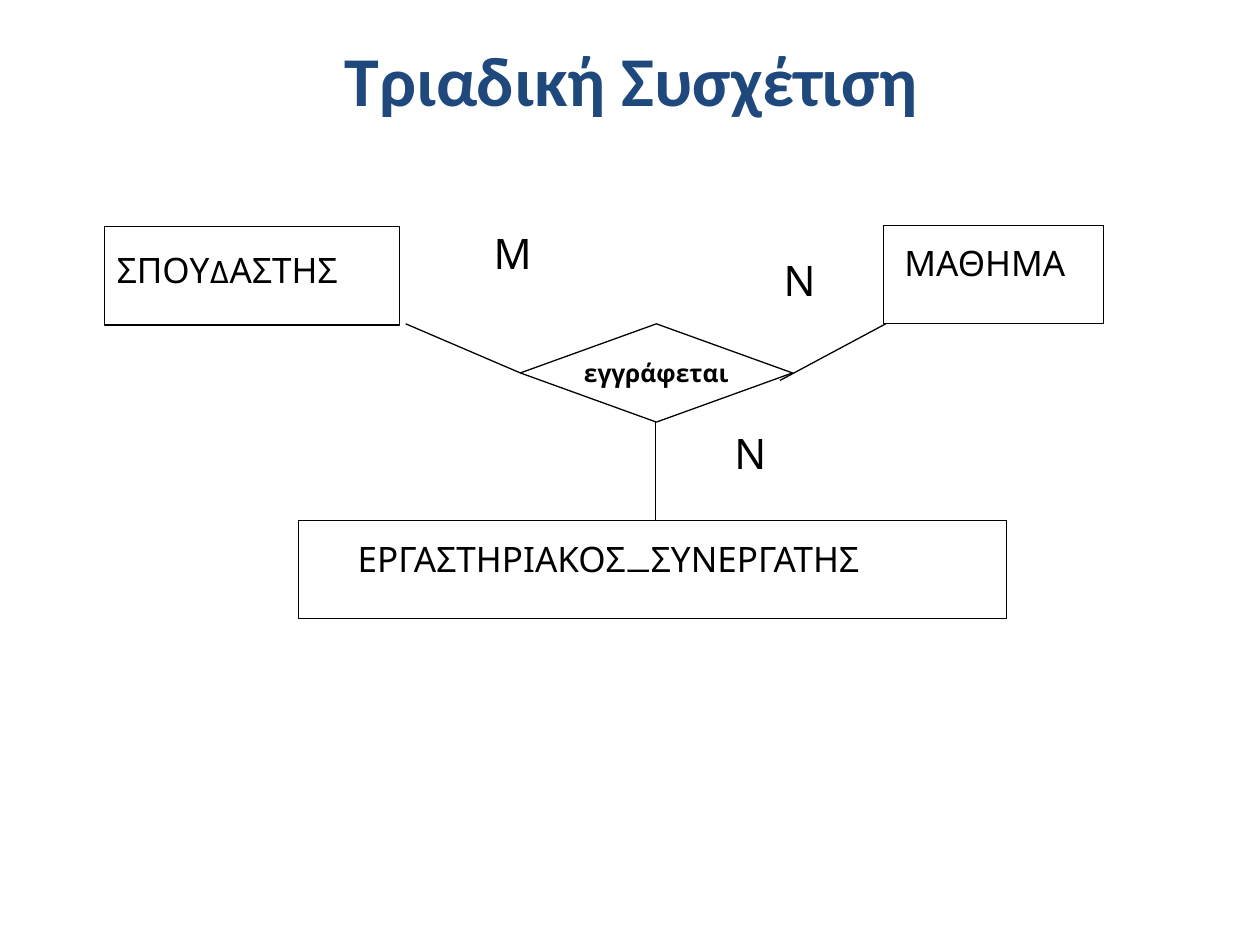
from lxml.etree import SubElement
from pptx import Presentation
from pptx.dml.color import RGBColor
from pptx.enum.shapes import MSO_CONNECTOR, MSO_SHAPE
from pptx.enum.text import MSO_ANCHOR, PP_ALIGN
from pptx.oxml.ns import qn
from pptx.util import Inches, Pt

# Content: positions in inches
TITLE = "Τριαδική Συσχέτιση"
ENTITIES = [  # left, top, width, height
    (0.83, 1.8, 2.34, 0.78),
    (7.01, 1.79, 1.75, 0.78),
    (2.37, 4.13, 5.62, 0.78),
]
RELATIONSHIP = ("εγγράφεται", (4.13, 2.57, 2.16, 0.78))
LINKS = [  # start, end
    ((3.22, 2.57), (4.13, 2.96)),
    ((6.19, 3.02), (7.03, 2.57)),
    ((5.2, 3.35), (5.2, 4.13)),
]
LABELS = [  # text, size, position
    ("ΣΠΟΥΔΑΣΤΗΣ", 20, (0.83, 1.92, 2.34, 0.58)),
    ("ΜΑΘΗΜΑ", 20, (7.08, 1.87, 1.66, 0.58)),
    ("ΕΡΓΑΣΤΗΡΙΑΚΟΣ_ΣΥΝΕΡΓΑΤΗΣ", 20, (2.74, 4.22, 4.98, 0.58)),
    ("Ν", 24, (6.12, 1.97, 0.52, 0.67)),
    ("Ν", 24, (5.73, 3.34, 0.52, 0.67)),
    ("Μ", 24, (3.82, 1.76, 0.57, 0.67)),
]
BLACK, NAVY = "000000", "1F497D"


def color(hex_code):
    return RGBColor.from_string(hex_code)


def inches(values):
    return [Inches(value) for value in values]


def write(shape, text, size, font="Karla", hex_code=BLACK, bold=False,
          align=PP_ALIGN.LEFT, anchor=MSO_ANCHOR.TOP, wrap=True):
    frame = shape.text_frame
    frame.text = text
    frame.word_wrap = wrap
    frame.vertical_anchor = anchor
    para = frame.paragraphs[0]
    para.alignment = align
    span = para.runs[0].font
    span.name, span.size, span.bold = font, Pt(size), bold
    span.color.rgb = color(hex_code)


def set_line(shape):
    shape.line.color.rgb = color(BLACK)
    shape.line.width = Pt(0.75)


def add_outline(slide, kind, position):
    shape = slide.shapes.add_shape(kind, *inches(position))
    shape.shadow.inherit = False
    shape.fill.background()
    set_line(shape)
    return shape


def add_link(slide, start, end):
    link = slide.shapes.add_connector(MSO_CONNECTOR.STRAIGHT, *inches(start + end))
    set_line(link)
    SubElement(link._element.spPr, qn("a:effectLst"))


def main():
    deck = Presentation()
    deck.slide_width, deck.slide_height = Inches(10), Inches(7.5)
    slide = deck.slides.add_slide(deck.slide_layouts[5])

    # Title
    title = slide.shapes.title
    title.left, title.top, title.width, title.height = inches((0.51, 0.13, 9, 0.99))
    write(title, TITLE, 40, "Calibri", NAVY, True, PP_ALIGN.CENTER, MSO_ANCHOR.MIDDLE)

    # Entities and the relationship between them
    for position in ENTITIES:
        add_outline(slide, MSO_SHAPE.RECTANGLE, position)
    name, position = RELATIONSHIP
    diamond = add_outline(slide, MSO_SHAPE.DIAMOND, position)
    write(diamond, name, 14, bold=True, align=PP_ALIGN.CENTER,
          anchor=MSO_ANCHOR.MIDDLE, wrap=False)
    for start, end in LINKS:
        add_link(slide, start, end)

    # Entity names and cardinalities
    for text, size, position in LABELS:
        write(slide.shapes.add_textbox(*inches(position)), text, size)

    deck.save("out.pptx")


if __name__ == "__main__":
    main()
